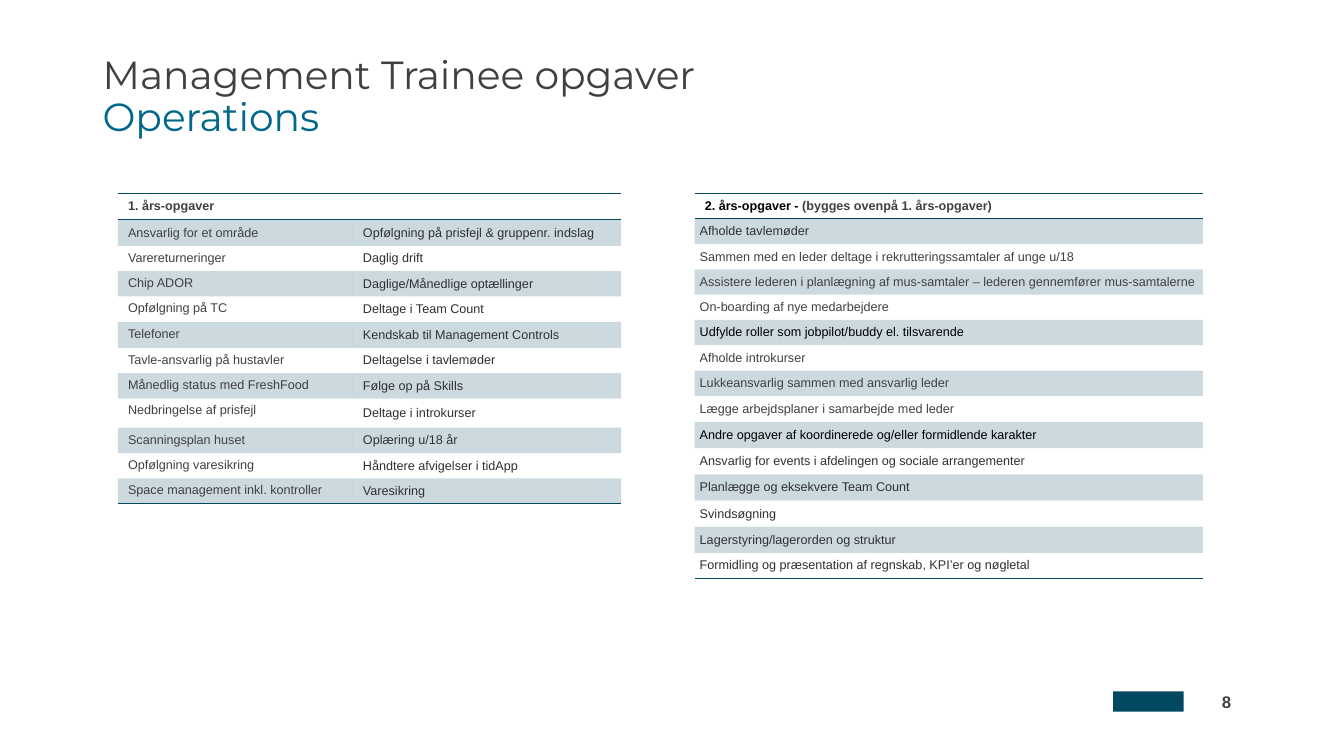
from lxml import etree
from pptx import Presentation
from pptx.dml.color import RGBColor
from pptx.enum.shapes import MSO_SHAPE
from pptx.enum.text import MSO_ANCHOR, PP_ALIGN
from pptx.oxml.ns import qn
from pptx.util import Inches, Pt

TOP, MIDDLE = MSO_ANCHOR.TOP, MSO_ANCHOR.MIDDLE
RIGHT = PP_ALIGN.RIGHT
PETROL = RGBColor(0x00, 0x49, 0x61)
TEAL = RGBColor(0x00, 0x68, 0x8A)
GREY = RGBColor(0x41, 0x40, 0x41)
CHARCOAL = RGBColor(0x31, 0x30, 0x31)
BLACK = RGBColor(0x00, 0x00, 0x00)
PLAIN_TABLE_STYLE = "{2D5ABB26-0587-4C30-8999-92F81FD0307C}"

# Content
TITLE = [("Management Trainee opgaver", GREY), ("Operations", TEAL)]
PAGE_NUMBER = "8"

YEAR_1_HEADER = [("1. års-opgaver", GREY)]
YEAR_1_TASKS = [
    ("Ansvarlig for et område", "Opfølgning på prisfejl & gruppenr. indslag"),
    ("Varereturneringer", "Daglig drift"),
    ("Chip ADOR", "Daglige/Månedlige optællinger"),
    ("Opfølgning på TC", "Deltage i Team Count"),
    ("Telefoner", "Kendskab til Management Controls"),
    ("Tavle-ansvarlig på hustavler", "Deltagelse i tavlemøder"),
    ("Månedlig status med FreshFood", "Følge op på Skills"),
    ("Nedbringelse af prisfejl", "Deltage i introkurser"),
    ("Scanningsplan huset", "Oplæring u/18 år"),
    ("Opfølgning varesikring", "Håndtere afvigelser i tidApp"),
    ("Space management inkl. kontroller", "Varesikring"),
]
YEAR_1_HEIGHTS = [0.26, 0.26, 0.25, 0.25, 0.25, 0.26, 0.25, 0.25, 0.29, 0.25, 0.25, 0.25]

YEAR_2_HEADER = [("2. års-opgaver - ", BLACK), ("(bygges ovenpå 1. års-opgaver)", GREY)]
YEAR_2_TASKS = [
    ("Afholde tavlemøder", CHARCOAL),
    ("Sammen med en leder deltage i rekrutteringssamtaler af unge u/18", GREY),
    ("Assistere lederen i planlægning af mus-samtaler – lederen gennemfører mus-samtalerne", GREY),
    ("On-boarding af nye medarbejdere", GREY),
    ("Udfylde roller som jobpilot/buddy el. tilsvarende", BLACK),
    ("Afholde introkurser", GREY),
    ("Lukkeansvarlig sammen med ansvarlig leder", GREY),
    ("Lægge arbejdsplaner i samarbejde med leder", GREY),
    ("Andre opgaver af koordinerede og/eller formidlende karakter", BLACK),
    ("Ansvarlig for events i afdelingen og sociale arrangementer", CHARCOAL),
    ("Planlægge og eksekvere Team Count", CHARCOAL),
    ("Svindsøgning", CHARCOAL),
    ("Lagerstyring/lagerorden og struktur", CHARCOAL),
    ("Formidling og præsentation af regnskab, KPI’er og nøgletal", CHARCOAL),
]
YEAR_2_HEIGHTS = [0.24] * 8 + [0.26] * 6 + [0.24]


def add_text_box(slide, left, top, width, height):
    frame = slide.shapes.add_textbox(
        Inches(left), Inches(top), Inches(width), Inches(height)).text_frame
    frame.word_wrap = True
    return frame


def add_rule(cell, side):
    """Draw a 1 pt line on the side 'a:lnT' or 'a:lnB' of a cell."""
    line = etree.Element(qn(side), w=str(Pt(1)))
    fill = etree.SubElement(line, qn("a:solidFill"))
    etree.SubElement(fill, qn("a:srgbClr"), val=str(PETROL))
    cell._tc.get_or_add_tcPr().insert(0, line)


def shade(cell, banded):
    if not banded:
        cell.fill.background()
        return
    cell.fill.solid()
    cell.fill.fore_color.rgb = PETROL
    color = cell._tc.tcPr.find(".//" + qn("a:srgbClr"))
    etree.SubElement(color, qn("a:alpha"), val="20000")


def write(cell, runs, bold, anchor):
    cell.vertical_anchor = anchor
    paragraph = cell.text_frame.paragraphs[0]
    paragraph.font.name = "Arial"
    paragraph.font.size = Pt(9)
    paragraph.font.bold = bold
    for text, color in runs:
        run = paragraph.add_run()
        run.text = text
        run.font.color.rgb = color


def add_task_table(slide, left, widths, heights, header, rows, inset):
    """rows holds, for each row, one (text, colour, anchor) per column."""
    frame = slide.shapes.add_table(
        len(heights), len(widths), Inches(left), Inches(1.92),
        Inches(sum(widths)), Inches(sum(heights)))
    frame.element.find(".//" + qn("a:tableStyleId")).text = PLAIN_TABLE_STYLE
    table = frame.table
    table.first_row = table.horz_banding = False
    for column, width in zip(table.columns, widths):
        column.width = Inches(width)
    for row, height in zip(table.rows, heights):
        row.height = Inches(height)

    # Header across all columns
    header_cells = list(table.rows[0].cells)
    if len(widths) > 1:
        header_cells[0].merge(header_cells[-1])
    write(header_cells[0], header, True, TOP)
    for cell in header_cells:
        shade(cell, False)
        add_rule(cell, "a:lnB")
        add_rule(cell, "a:lnT")

    # Tasks, every other row shaded
    for r, tasks in enumerate(rows, start=1):
        for c, (text, color, anchor) in enumerate(tasks):
            cell = table.cell(r, c)
            cell.margin_left = cell.margin_right = Inches(inset)
            write(cell, [(text, color)], False, anchor)
            shade(cell, r % 2 == 1 and (r < len(rows) or len(widths) > 1))
            if r == len(rows):
                add_rule(cell, "a:lnB")


def main():
    prs = Presentation()
    prs.slide_width, prs.slide_height = Inches(13.33), Inches(7.5)
    slide = prs.slides.add_slide(prs.slide_layouts[6])

    # Footer block
    block = slide.shapes.add_shape(
        MSO_SHAPE.RECTANGLE, Inches(11.04), Inches(6.86), Inches(0.7), Inches(0.2))
    block.shadow.inherit = False
    block.fill.solid()
    block.fill.fore_color.rgb = PETROL
    block.line.fill.background()

    # Title
    title_frame = add_text_box(slide, 0.92, 0.4, 11.5, 1.14)
    title_frame.vertical_anchor = MIDDLE
    title = title_frame.paragraphs[0]
    title.line_spacing = 0.9
    title.font.name = "Montserrat"
    title.font.size = Pt(28)
    for i, (text, color) in enumerate(TITLE):
        if i:
            title.add_line_break()
        run = title.add_run()
        run.text = text
        run.font.color.rgb = color

    # Page number
    number = add_text_box(slide, 11.71, 6.81, 0.6, 0.25).paragraphs[0]
    number.text = PAGE_NUMBER
    number.alignment = RIGHT
    number.font.name = "Arial"
    number.font.size = Pt(12)
    number.font.bold = True
    number.font.color.rgb = GREY

    # Task tables
    year_1_rows = [
        [(first, GREY, TOP if i else MIDDLE), (second, CHARCOAL, MIDDLE)]
        for i, (first, second) in enumerate(YEAR_1_TASKS)]
    year_2_rows = [[(text, color, MIDDLE)] for text, color in YEAR_2_TASKS]
    add_task_table(slide, 1.17, [2.33, 2.66], YEAR_1_HEIGHTS,
                   YEAR_1_HEADER, year_1_rows, 0.1)
    add_task_table(slide, 6.89, [5.04], YEAR_2_HEIGHTS,
                   YEAR_2_HEADER, year_2_rows, 0.05)

    prs.save("out.pptx")


if __name__ == "__main__":
    main()
